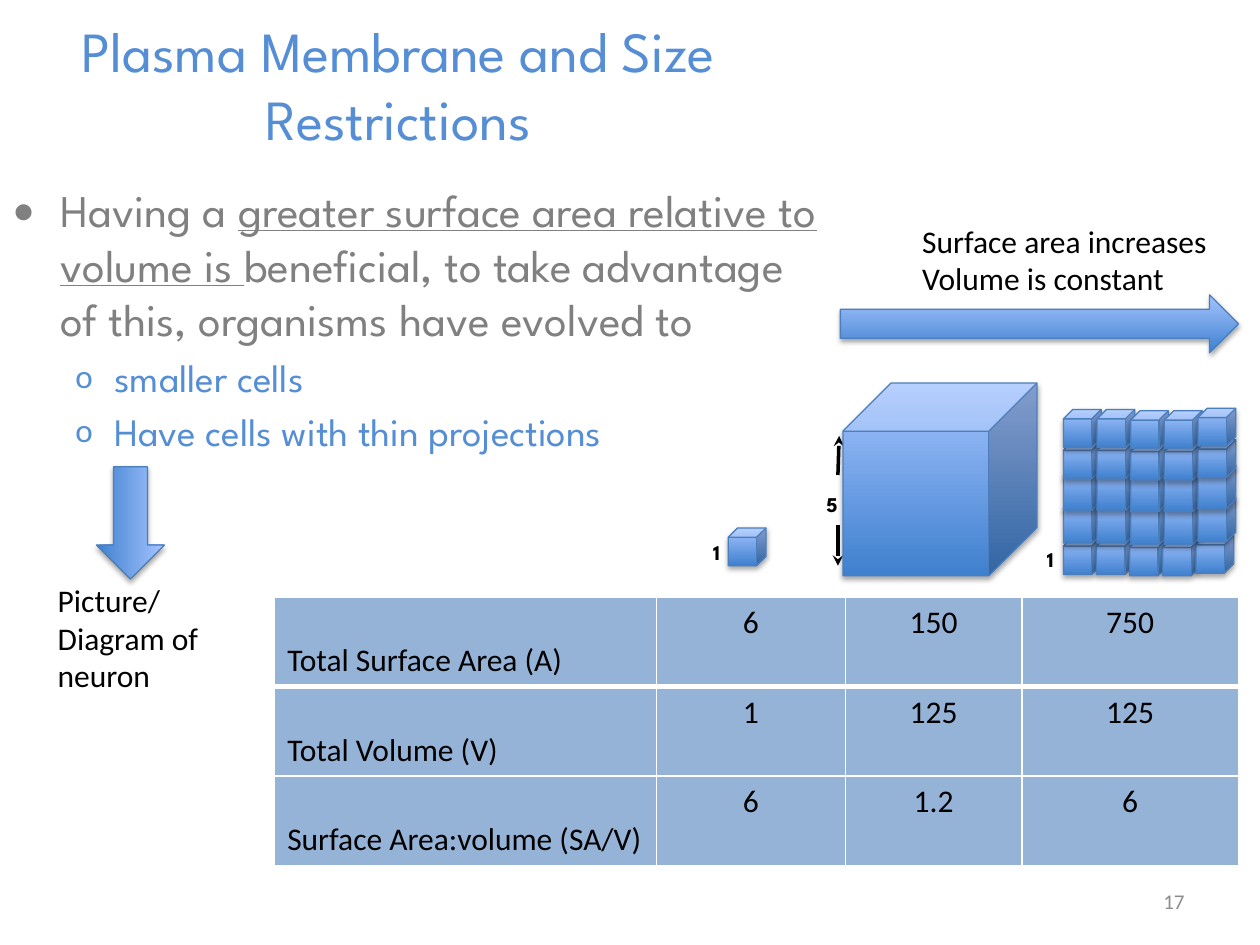
from lxml import etree
from pptx import Presentation
from pptx.dml.color import RGBColor
from pptx.enum import shapes, text
from pptx.oxml import parse_xml
from pptx.oxml.ns import nsdecls, qn
from pptx.util import Inches, Pt

COLORS = {
    "black": "000000", "white": "FFFFFF", "blue": "558ED5", "gray": "808080",
    "number": "8C8C8C", "cell": "95B3D7", "edge": "4B7EBC",
    "deep": "3F80CE", "pale": "A4C4FF",
}
RGB = {name: RGBColor.from_string(value) for name, value in COLORS.items()}
TOP, MIDDLE = text.MSO_ANCHOR.TOP, text.MSO_ANCHOR.MIDDLE
LEFT, CENTER, RIGHT = text.PP_ALIGN.LEFT, text.PP_ALIGN.CENTER, text.PP_ALIGN.RIGHT

# The page is a grid of 100 columns by 75 rows
deck = Presentation()
deck.slide_width, deck.slide_height = Inches(10), Inches(7.5)
COLUMN, ROW = deck.slide_width // 100, deck.slide_height // 75
page = deck.slides.add_slide(deck.slide_layouts[6])


def add_text(place, paras, frame_format, font_format, align=LEFT):
    """Text box whose paragraphs are lists of (text, underlined) spans."""
    left, top, width, height = place
    box = page.shapes.add_textbox(
        int(left * COLUMN), int(top * ROW), int(width * COLUMN), int(height * ROW))
    frame = box.text_frame
    for name, value in {"word_wrap": True, **frame_format}.items():
        setattr(frame, name, value)
    for index, spans in enumerate(paras):
        para = frame.paragraphs[0] if index == 0 else frame.add_paragraph()
        para.alignment = align
        for words, underlined in spans:
            span = para.add_run()
            span.text = words
            color = font_format["color"]
            span.font.color.rgb = RGB[color]
            for name, value in font_format.items():
                if name != "color":
                    setattr(span.font, name, value)
            if underlined:
                span.font.underline = True
    return box


def add_glossy(kind, left, top, width, height):
    """Preset shape with the blue gradient, thin edge and soft shadow."""
    shape = page.shapes.add_shape(
        kind, int(left * COLUMN), int(top * ROW), int(width * COLUMN), int(height * ROW))
    shape.fill.gradient()
    shape.fill.gradient_angle = 90
    for stop, color in zip(shape.fill.gradient_stops, ("deep", "pale")):
        stop.color.rgb = RGB[color]
    shape.line.color.rgb = RGB["edge"]
    shape.line.width = Pt(0.75)
    shape.shadow.inherit = False
    effects = shape.element.spPr.find(qn("a:effectLst"))
    effects.append(parse_xml(
        f'<a:outerShdw {nsdecls("a")} blurRad="{Pt(3.1)}" dist="{Pt(1.8)}" '
        f'dir="5400000" rotWithShape="0"><a:srgbClr val="{COLORS["black"]}">'
        '<a:alpha val="35000"/></a:srgbClr></a:outerShdw>'))
    return shape


CUBE = shapes.MSO_SHAPE.CUBE
ARROW = shapes.MSO_SHAPE.RIGHT_ARROW
CAPTION = {"name": "Calibri", "size": Pt(18), "color": "black"}
EDGE_LABEL = {"name": "League Spartan", "size": Pt(12), "color": "black", "bold": True}

# Dimension arrows beside the large cube
for tip, tail in (((66.5, 44.9), (66.5, 41.7)), ((66.6, 34.6), (66.5, 37.7))):
    arrow = page.shapes.add_connector(
        shapes.MSO_CONNECTOR.STRAIGHT, int(tip[0] * COLUMN), int(tip[1] * ROW),
        int(tail[0] * COLUMN), int(tail[1] * ROW))
    arrow.line.color.rgb = RGB["black"]
    arrow.line.width = Pt(2)
    etree.SubElement(arrow.line._get_or_add_ln(), qn("a:headEnd"), type="stealth")
    etree.SubElement(arrow.element.spPr, qn("a:effectLst"))

# Page number and title
add_text((71.7, 69.5, 23.3, 4), [[("17", False)]], {"vertical_anchor": MIDDLE},
         {"name": "Calibri", "size": Pt(12), "color": "number"}, RIGHT)
add_text((0, 2.5, 63.2, 8.3), [[("Plasma Membrane and Size Restrictions", False)]],
         {"vertical_anchor": MIDDLE},
         {"name": "League Spartan", "size": Pt(32.4), "color": "blue"}, CENTER)

# Bulleted body
body = add_text(
    (0, 14, 66.3, 23.9),
    [[("Having a ", False),
      ("greater surface area relative to volume is ", True),
      ("beneficial, to take advantage of this, organisms have evolved to", False)],
     [("smaller cells", False)],
     [("Have cells with thin projections", False)]],
    {"vertical_anchor": TOP},
    {"name": "League Spartan", "size": Pt(25.9), "color": "gray"})
for index, para in enumerate(body.text_frame.paragraphs):
    nested = index > 0
    indent, hang, mark, scale = (0.81, 0.31, "o", 85) if nested else (0.38, 0.38, "•", 100)
    para.level = int(nested)
    para.space_before = Pt(4.4 if nested else 5.2)
    props = para._p.get_or_add_pPr()
    props.set("marL", str(Inches(indent)))
    props.set("indent", str(-Inches(hang)))
    etree.SubElement(props, qn("a:buSzPct"), val=str(scale * 1000))
    etree.SubElement(props, qn("a:buFont"), typeface="Calibri")
    etree.SubElement(props, qn("a:buChar"), char=mark)
    if nested:
        for span in para.runs:
            span.font.size = Pt(22.2)
            span.font.color.rgb = RGB["blue"]

# Table of areas and volumes
ROWS = [
    ("Total Surface Area (A)", "6", "150", "750"),
    ("Total Volume (V)", "1", "125", "125"),
    ("Surface Area:volume (SA/V)", "6", "1.2", "6"),
]
WIDTHS = (30.3, 15, 14, 17.2)
ROW_HEIGHT = 7.1
table = page.shapes.add_table(
    len(ROWS), len(WIDTHS), int(21.8 * COLUMN), int(47.4 * ROW),
    int(sum(WIDTHS) * COLUMN), int(len(ROWS) * ROW_HEIGHT * ROW)).table
for column, width in zip(table.columns, WIDTHS):
    column.width = int(width * COLUMN)
for r, values in enumerate(ROWS):
    table.rows[r].height = int(ROW_HEIGHT * ROW)
    for c, value in enumerate(values):
        cell = table.cell(r, c)
        cell.vertical_anchor = TOP if c else text.MSO_ANCHOR.BOTTOM
        para = cell.text_frame.paragraphs[0]
        para.alignment = CENTER if c else LEFT
        span = para.add_run()
        span.text = value
        span.font.name, span.font.size, span.font.bold = "Calibri", Pt(18), False
        span.font.color.rgb = RGB["black"]
        props = cell._tc.get_or_add_tcPr()
        for side in "LRTB":
            heavy = (r, side) in ((0, "B"), (1, "T"))
            props.append(parse_xml(
                f'<a:ln{side} {nsdecls("a")} w="{Pt(3 if heavy else 1)}"><a:solidFill>'
                f'<a:srgbClr val="{COLORS["white"]}"/></a:solidFill></a:ln{side}>'))
        cell.fill.solid()
        cell.fill.fore_color.rgb = RGB["cell"]

# Large cube and single unit cube
add_glossy(CUBE, 66.9, 30.4, 15.4, 15.3)
add_glossy(CUBE, 57.8, 41.9, 3, 3)

# Stack of 25 unit cubes: bottom row first, then each column upward
JITTER = (0, 0, 0.1, 0.1, -0.1)
for c, shift in enumerate(JITTER):
    add_glossy(CUBE, 84.4 + 2.63 * c, 42.6 + shift, 3, 3)
for c, shift in enumerate(JITTER):
    for top, height in ((39.6, 3.5), (37, 3.5), (35, 3), (32.5, 3)):
        add_glossy(CUBE, 84.4 + 2.67 * c, top + shift, 3, height)

# Edge lengths
for label, left, top, width, inset in (
        ("5", 64.6, 38.5, 3, 1), ("1", 56.3, 42.3, 1.4, 0.3), ("1", 82.8, 42.9, 1.4, 0.3)):
    add_text((left, top, width, 2.6), [[(label, False)]],
             {"word_wrap": False, "margin_left": int(inset * COLUMN), "margin_right": 0},
             EDGE_LABEL)

# Trend arrow and its caption
add_glossy(ARROW, 66.7, 23.4, 31.6, 4.6)
add_text((72.2, 17.1, 24.9, 7.1),
         [[("Surface area increases", False)], [("Volume is constant", False)]],
         {"word_wrap": False}, CAPTION)

# Neuron note with the arrow pointing down to it
add_text((3.6, 39.5, 16.5, 19.2), [[("Picture/Diagram of neuron", False)]],
         {"margin_top": int(6.6 * ROW)}, CAPTION)
add_glossy(ARROW, 5.9, 38.8, 8.9, 5.4).rotation = 90

deck.save("out.pptx")
